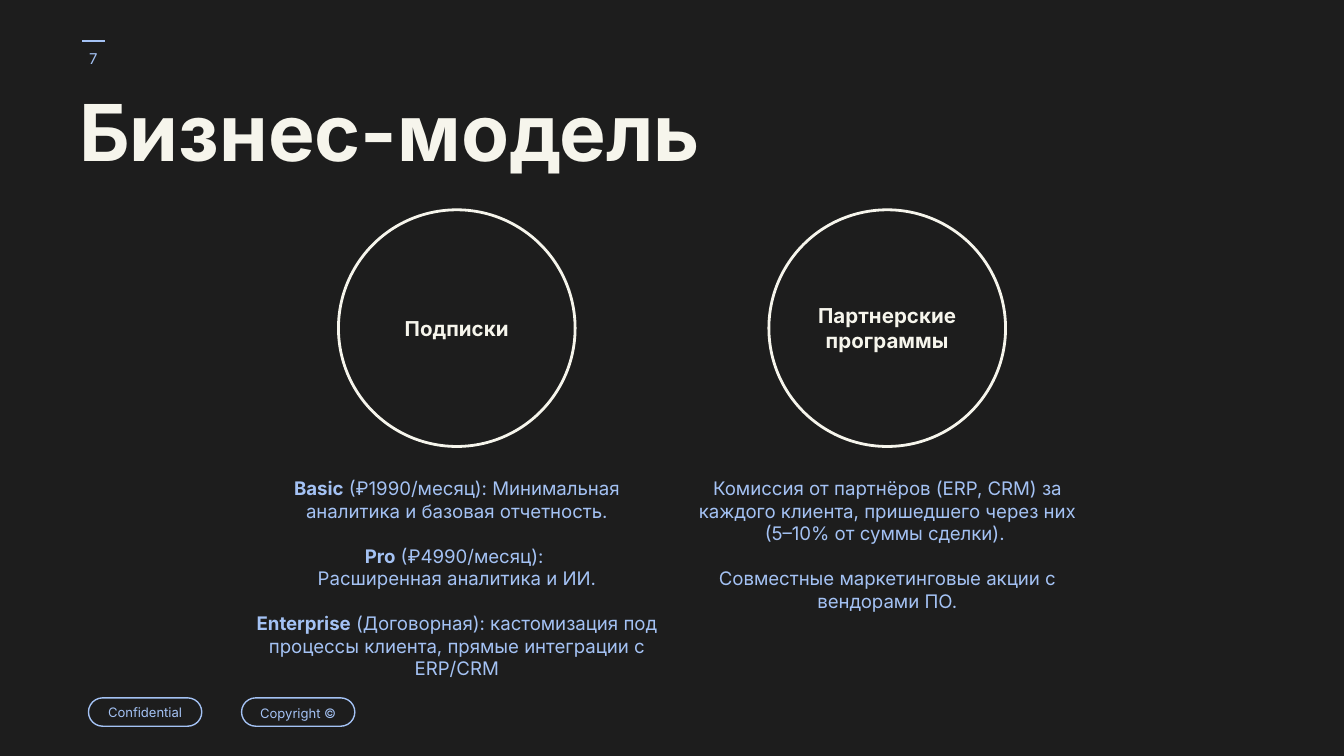
from dataclasses import dataclass

from lxml.etree import SubElement
from pptx import Presentation
from pptx.dml.color import RGBColor as Color
from pptx.enum.shapes import MSO_CONNECTOR as Connector, MSO_SHAPE as Shape
from pptx.enum.text import MSO_ANCHOR as Anchor, MSO_AUTO_SIZE as AutoSize, PP_ALIGN as Align
from pptx.oxml.ns import qn
from pptx.util import Pt


@dataclass(frozen=True)
class Theme:
    font: str = "Inter"
    dark: Color = Color(0x1D, 0x1D, 0x1D)
    cream: Color = Color(0xF6, 0xF5, 0xEC)
    blue: Color = Color(0xA4, 0xC2, 0xF4)
    title: float = 42
    heading: float = 11
    body: float = 10
    number: float = 8
    label: float = 7


theme = Theme()


def write(box, paragraphs, size, color, bold=False, align=Align.CENTER,
          anchor=Anchor.MIDDLE, spacing=1.0, gaps=()):
    """Fill a box; each paragraph is a list of (text, bold) spans or a string."""
    frame = box.text_frame
    frame_format = {"word_wrap": True, "auto_size": AutoSize.NONE, "vertical_anchor": anchor}
    frame_format |= {f"margin_{side}": Pt(7.2) for side in ("left", "top", "right", "bottom")}
    for name, value in frame_format.items():
        setattr(frame, name, value)
    for index, spans in enumerate(paragraphs):
        para = frame.paragraphs[0] if index == 0 else frame.add_paragraph()
        para_format = {"alignment": align, "line_spacing": spacing,
                       "space_before": Pt(12.1 if index in gaps else 0), "space_after": Pt(0)}
        for name, value in para_format.items():
            setattr(para, name, value)
        for text, strong in [(spans, bold)] if isinstance(spans, str) else spans:
            span = para.add_run()
            span.text = text
            for name, value in {"name": theme.font, "size": Pt(size), "bold": strong}.items():
                setattr(span.font, name, value)
            span.font.color.rgb = color


def add_outline(page, left, top, width, height, color, weight):
    """Add an unfilled shape with fully rounded ends."""
    box = page.shapes.add_shape(Shape.ROUNDED_RECTANGLE, Pt(left), Pt(top), Pt(width), Pt(height))
    box.adjustments[0] = 0.5
    box.shadow.inherit = False
    box.fill.background()
    box.line.color.rgb = color
    box.line.width = Pt(weight)
    return box


deck = Presentation()
deck.slide_width, deck.slide_height = Pt(720), Pt(405)
page = deck.slides.add_slide(deck.slide_layouts[5])
page.background.fill.solid()
page.background.fill.fore_color.rgb = theme.dark

# Page number under a short rule
number = page.shapes.add_textbox(Pt(33), Pt(15.8), Pt(34), Pt(31))
write(number, ["7"], theme.number, theme.blue)
rule = page.shapes.add_connector(Connector.STRAIGHT, Pt(56), Pt(22), Pt(44), Pt(22))
rule.line.color.rgb = theme.blue
rule.line.width = Pt(0.75)
SubElement(rule._element.spPr, qn("a:effectLst"))

# Title
title = page.shapes.title
for name, value in {"left": 35.3, "top": 46.8, "width": 533, "height": 65.5}.items():
    setattr(title, name, Pt(value))
write(title, ["Бизнес-модель"], theme.title, theme.cream, bold=True,
      align=Align.LEFT, anchor=Anchor.TOP, spacing=0.8)

# Revenue streams: a circle centred above its description
column_width, circle_size = 230.6, 126.8
streams = [
    (["Подписки"],
     [[("Basic", True), (" (₽1990/месяц): Минимальная аналитика и базовая отчетность.", False)],
      [("Pro", True), (" (₽4990/месяц): ", False)],
      "Расширенная аналитика и ИИ.",
      [("Enterprise", True),
       (" (Договорная): кастомизация под процессы клиента, прямые интеграции с ERP/CRM", False)]],
     (1, 3), 130.3),
    (["Партнерские", "программы"],
     ["Комиссия от партнёров (ERP, CRM) за каждого клиента, пришедшего через них "
      "(5–10% от суммы сделки). ",
      "Совместные маркетинговые акции с вендорами ПО."],
     (1,), 120.2),
]
for column, (heading, details, gaps, height) in enumerate(streams):
    left = 129.4 + column * column_width
    circle = add_outline(page, left + (column_width - circle_size) / 2, 112.4,
                         circle_size, circle_size, theme.cream, 1.5)
    write(circle, heading, theme.heading, theme.cream, bold=True)
    description = page.shapes.add_textbox(Pt(left), Pt(248.4), Pt(column_width), Pt(height))
    write(description, details, theme.body, theme.blue, anchor=Anchor.TOP, gaps=gaps)

# Footer labels
for index, (label, spacing) in enumerate([("Confidential", 1.0), ("Copyright ©", 1.15)]):
    pill = add_outline(page, 47.4 + index * 82, 373.9, 60.7, 15.2, theme.blue, 0.75)
    write(pill, [label], theme.label, theme.blue, spacing=spacing)

deck.save("out.pptx")
